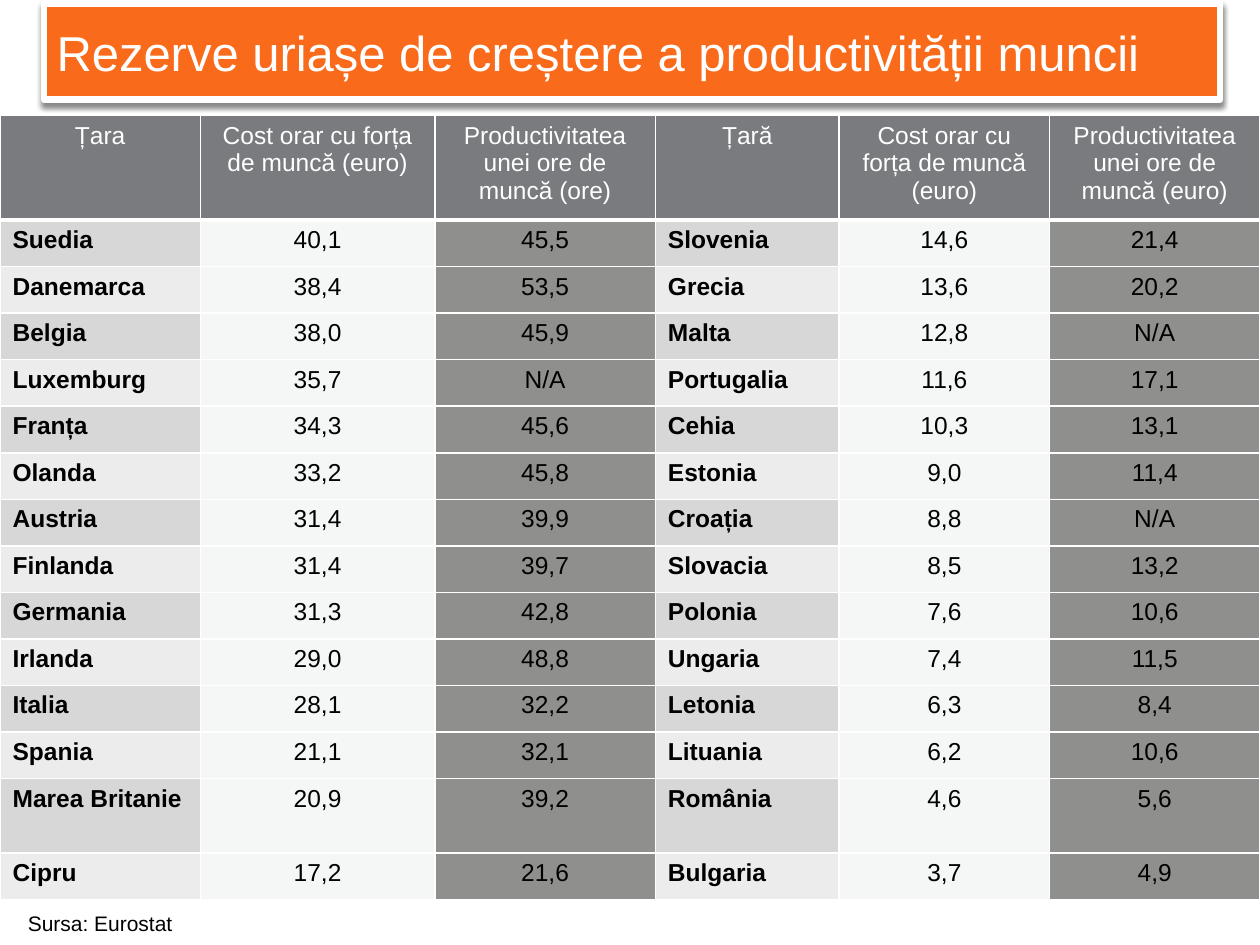
from lxml import etree
from pptx import Presentation
from pptx.dml.color import RGBColor
from pptx.enum import shapes, text
from pptx.oxml import parse_xml
from pptx.oxml.ns import nsdecls, qn
from pptx.util import Pt

TITLE = "Rezerve uriașe de creștere a productivității muncii"
SOURCE = "Sursa: Eurostat"
HEADERS = [
    "Țara", "Cost orar cu forța de muncă (euro)", "Productivitatea unei ore de muncă (ore)",
    "Țară", "Cost orar cu forța de muncă (euro)", "Productivitatea unei ore de muncă (euro)",
]
COUNTRIES = [
    ("Suedia", "40,1", "45,5", "Slovenia", "14,6", "21,4"),
    ("Danemarca", "38,4", "53,5", "Grecia", "13,6", "20,2"),
    ("Belgia", "38,0", "45,9", "Malta", "12,8", "N/A"),
    ("Luxemburg", "35,7", "N/A", "Portugalia", "11,6", "17,1"),
    ("Franța", "34,3", "45,6", "Cehia", "10,3", "13,1"),
    ("Olanda", "33,2", "45,8", "Estonia", "9,0", "11,4"),
    ("Austria", "31,4", "39,9", "Croația", "8,8", "N/A"),
    ("Finlanda", "31,4", "39,7", "Slovacia", "8,5", "13,2"),
    ("Germania", "31,3", "42,8", "Polonia", "7,6", "10,6"),
    ("Irlanda", "29,0", "48,8", "Ungaria", "7,4", "11,5"),
    ("Italia", "28,1", "32,2", "Letonia", "6,3", "8,4"),
    ("Spania", "21,1", "32,1", "Lituania", "6,2", "10,6"),
    ("Marea Britanie", "20,9", "39,2", "România", "4,6", "5,6"),
    ("Cipru", "17,2", "21,6", "Bulgaria", "3,7", "4,9"),
]
COLUMN_WIDTHS = [114.5, 134, 126, 105.1, 120.2, 120.2]
HEADER_HEIGHT, ROW_HEIGHT, TALL_HEIGHT = 59.8, 26.6, 42.5
TALL_COUNTRY = "Marea Britanie"
THEME = {
    "font": "Arial", "title_size": 28, "table_size": 14, "source_size": 12,
    "white": "FFFFFF", "black": "000000", "orange": "F96A1B", "header": "797B7E",
    "country": ("D7D7D8", "ECECEC"), "cost": "F5F7F7", "productivity": "8F8F8D",
}


def color(name):
    return RGBColor.from_string(THEME.get(name, name))


def add_text(tf, words, size, ink, bold=False, align=text.PP_ALIGN.LEFT):
    p = tf.paragraphs[0]
    p.alignment = align
    r = p.add_run()
    r.text = words
    r.font.name, r.font.size, r.font.bold = THEME["font"], Pt(THEME[size]), bold
    r.font.color.rgb = color(ink)


def add_title(s):
    sp = s.shapes.add_shape(shapes.MSO_SHAPE.RECTANGLE, Pt(25.2), Pt(2), Pt(672), Pt(55))
    sp.fill.solid()
    sp.fill.fore_color.rgb = color("orange")
    sp.line.color.rgb = color("white")
    sp.line.width = Pt(3.75)
    sp.shadow.inherit = False
    effects = sp._element.spPr.find(qn("a:effectLst"))
    effects.append(parse_xml(
        f'<a:outerShdw {nsdecls("a")} blurRad="{Pt(3)}" dist="{Pt(2.4)}" dir="5400000" '
        f'rotWithShape="0"><a:srgbClr val="{THEME["black"]}"><a:alpha val="45000"/>'
        '</a:srgbClr></a:outerShdw>'))
    sp.text_frame.word_wrap = True
    sp.text_frame.vertical_anchor = text.MSO_ANCHOR.MIDDLE
    add_text(sp.text_frame, TITLE, "title_size", "white")


def add_borders(cell, bottom):
    tc_pr = cell._tc.get_or_add_tcPr()
    for i, (side, width) in enumerate([("L", 1), ("R", 1), ("T", 1), ("B", bottom)]):
        ln = etree.Element(qn(f"a:ln{side}"), w=str(Pt(width)))
        fill = etree.SubElement(ln, qn("a:solidFill"))
        etree.SubElement(fill, qn("a:srgbClr"), val=THEME["white"])
        tc_pr.insert(i, ln)


def add_country_table(s):
    rows = [HEADERS, *COUNTRIES]
    heights = [HEADER_HEIGHT] + [
        TALL_HEIGHT if row[0] == TALL_COUNTRY else ROW_HEIGHT for row in COUNTRIES]
    table = s.shapes.add_table(len(rows), len(HEADERS), Pt(0), Pt(66),
                               Pt(sum(COLUMN_WIDTHS)), Pt(sum(heights))).table
    for column, width in zip(table.columns, COLUMN_WIDTHS):
        column.width = Pt(width)
    for i, (row, height) in enumerate(zip(rows, heights)):
        table.rows[i].height = Pt(height)
        body_fills = (THEME["country"][(i - 1) % 2], "cost", "productivity")
        for j, words in enumerate(row):
            cell = table.cell(i, j)
            is_header, is_name = i == 0, i > 0 and j % 3 == 0
            cell.fill.solid()
            cell.fill.fore_color.rgb = color("header" if is_header else body_fills[j % 3])
            add_borders(cell, 3 if is_header else 1)
            add_text(cell.text_frame, words, "table_size", "white" if is_header else "black",
                     is_name, text.PP_ALIGN.LEFT if is_name else text.PP_ALIGN.CENTER)


def add_source(s):
    tf = s.shapes.add_textbox(Pt(8.8), Pt(517), Pt(215), Pt(21.8)).text_frame
    tf.word_wrap = True
    add_text(tf, SOURCE, "source_size", "black")


def main():
    """Build the labour productivity slide."""
    prs = Presentation()
    prs.slide_width, prs.slide_height = Pt(720), Pt(540)
    s = prs.slides.add_slide(prs.slide_layouts[6])
    add_title(s)
    add_country_table(s)
    add_source(s)
    prs.save("out.pptx")


if __name__ == "__main__":
    main()
